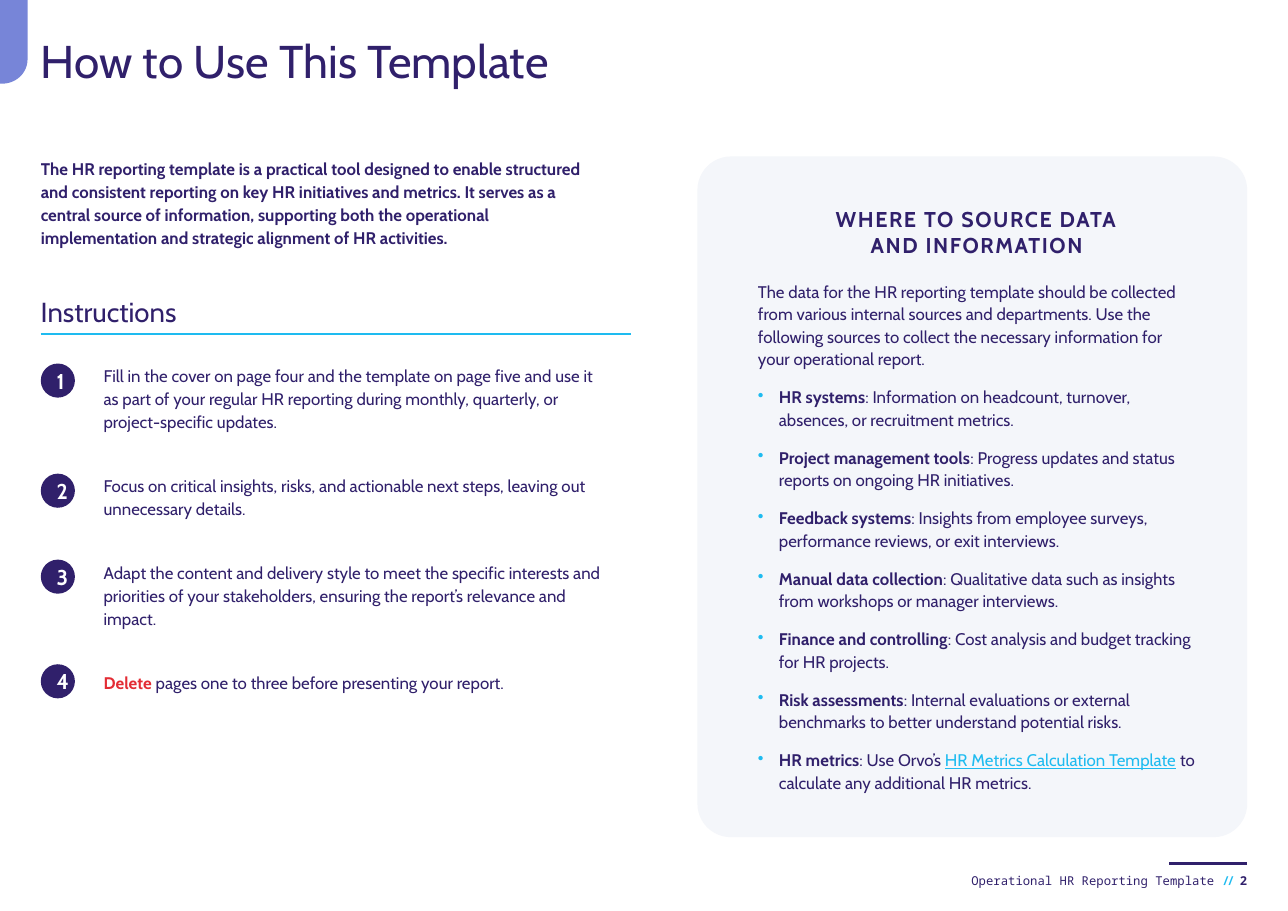
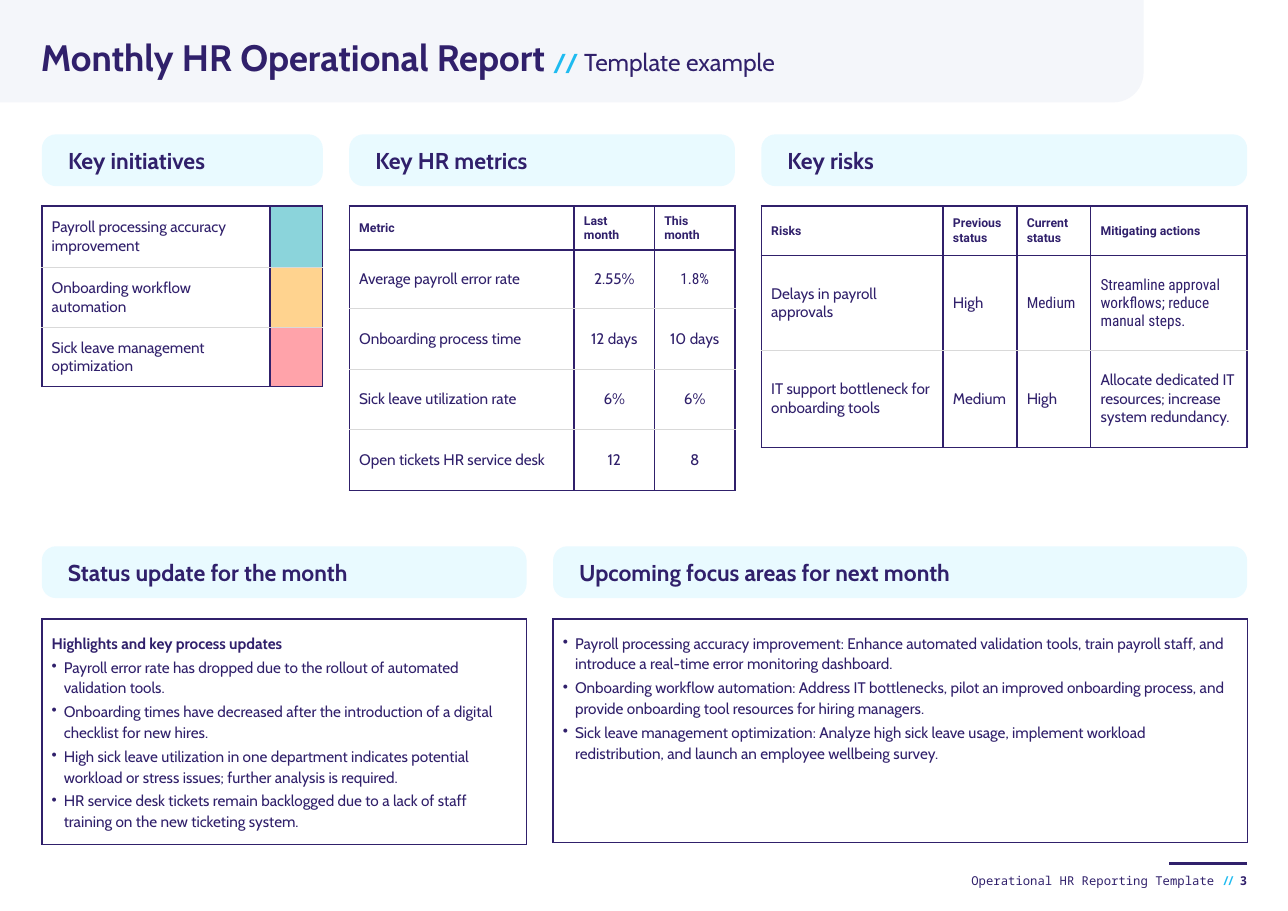
from copy import deepcopy
from math import cos, pi, sin

from lxml import etree
from pptx import Presentation
from pptx import util as u
from pptx.dml.color import RGBColor
from pptx.enum import shapes, text
from pptx.oxml import ns

PX = 9144  # EMU in one px, 100 px to the inch
INK, CYAN, WHITE, RED = "30206B", "1EBBF0", "FFFFFF", "E32C34"
PERIWINKLE, MIST, ICE, GREY = "7785D8", "F4F6FA", "E9FAFF", "D9D9D9"
LEFT, RIGHT, GAP = 37, 1132, 24

SHAPE, ALIGN, ANCHOR = shapes.MSO_SHAPE, text.PP_ALIGN, text.MSO_ANCHOR
BODY = {"name": "Cabin", "size": u.Pt(11), "bold": False, "color": INK}
SMALL = {**BODY, "size": u.Pt(10)}
TABLE_HEAD = {**BODY, "name": "Roboto", "size": u.Pt(8), "bold": True}
FOOTER = {**BODY, "name": "Noto Sans Mono", "size": u.Pt(8)}
CONDENSED = {"name": "Roboto Condensed"}
BOLD = {"bold": True}
TITLE_FORM = {"alignment": ALIGN.LEFT, "line_spacing": 0.9}
CARD_FORM = {"line_spacing": 1.12, "space_after": u.Pt(2)}


def px(*lengths):
    return [u.Emu(round(length * PX)) for length in lengths]


def rgb(color):
    return RGBColor.from_string(color)


def apply(target, values):
    for key, value in values.items():
        setattr(target, key, value)


def insets(across, down):
    across, down = px(across, down)
    return {"margin_left": across, "margin_right": across,
            "margin_top": down, "margin_bottom": down}


def add_bullet(paragraph, indent, color):
    properties = paragraph._p.get_or_add_pPr()
    properties.set("marL", str(indent * PX))
    properties.set("indent", str(-indent * PX))
    mark = etree.SubElement(properties, ns.qn("a:buClr"))
    etree.SubElement(mark, ns.qn("a:srgbClr"), val=color)
    etree.SubElement(properties, ns.qn("a:buChar"), char="•")


def add_run(paragraph, words, color, spacing=0, **font):
    run = paragraph.add_run()
    run.text = words
    apply(run.font, font)
    run.font.color.rgb = rgb(color)
    if spacing:
        run._r.get_or_add_rPr().set("spc", str(spacing))
    return run


def write(frame, runs, font=BODY, form=None, bullet=None):
    """Add one paragraph; runs is a string or (words, font changes) pairs."""
    paragraph = frame.add_paragraph() if frame.text else frame.paragraphs[0]
    if bullet:
        add_bullet(paragraph, *bullet)
    apply(paragraph, form or {})
    for words, changes in [(runs, {})] if isinstance(runs, str) else runs:
        first, *others = words.split("\n")
        run = add_run(paragraph, first, **{**font, **changes})
        for line in others:
            paragraph.add_line_break()
            paragraph._p[-1].append(deepcopy(run._r.rPr))
            add_run(paragraph, line, **{**font, **changes})


def add_text(slide, *box):
    frame = slide.shapes.add_textbox(*px(*box)).text_frame
    apply(frame, {"word_wrap": True, **insets(0, 0)})
    return frame


def paint(shape, color):
    shape.shadow.inherit = False
    shape.fill.solid()
    shape.fill.fore_color.rgb = rgb(color)
    shape.line.fill.background()


def add_shape(slide, kind, box, color, corner=None):
    shape = slide.shapes.add_shape(kind, *px(*box))
    paint(shape, color)
    if corner is not None:
        shape.adjustments[0] = corner
    return shape


def add_rule(slide, start, end, y, color, weight):
    rule = slide.shapes.add_connector(
        shapes.MSO_CONNECTOR.STRAIGHT, *px(start, y, end, y))
    rule.line.color.rgb = rgb(color)
    rule.line.width = u.Pt(weight)
    etree.SubElement(rule._element.spPr, ns.qn("a:effectLst"))


def add_corner_tab(slide):
    """Tab at the top left whose lower right corner is rounded."""
    arc = [(2 + 23 * cos(step * pi / 48), 54 + 22 * sin(step * pi / 48))
           for step in range(25)]
    outline = [px(*point) for point in [(25, 0), *arc, (0, 76)]]
    builder = slide.shapes.build_freeform(0, 0, scale=1.0)
    builder.add_line_segments(outline, close=True)
    paint(builder.convert_to_shape(), PERIWINKLE)


def add_title(slide, box, runs, font):
    title = slide.shapes.title
    apply(title, dict(zip(("left", "top", "width", "height"), px(*box))))
    apply(title.text_frame, {
        "word_wrap": True, "auto_size": text.MSO_AUTO_SIZE.NONE,
        "vertical_anchor": ANCHOR.TOP, **insets(0, 0)})
    write(title.text_frame, runs, font, TITLE_FORM)


def add_footer(slide, page):
    add_rule(slide, RIGHT, 1061, 784, INK, 2)
    write(add_text(slide, LEFT, 791, RIGHT - LEFT, 19),
          [("Operational HR Reporting Template ", {}),
           ("// ", {"color": CYAN, "bold": True, "spacing": -150}),
           (str(page), BOLD)],
          FOOTER, {"alignment": ALIGN.RIGHT, "line_spacing": 1.14})


def add_badge(slide, top, number):
    badge = add_shape(slide, SHAPE.OVAL, (LEFT, top, 31, 31), INK)
    badge.text_frame.vertical_anchor = ANCHOR.MIDDLE
    write(badge.text_frame, str(number),
          {**BODY, "size": u.Pt(14), "bold": True, "color": WHITE},
          {"alignment": ALIGN.CENTER})


def add_section(slide, left, top, width, heading):
    pill = add_shape(slide, SHAPE.ROUNDED_RECTANGLE, (left, top, width, 47),
                     ICE, 0.273)
    apply(pill.text_frame, {"word_wrap": True, "vertical_anchor": ANCHOR.MIDDLE,
                            **insets(20, 5)})
    write(pill.text_frame, heading, {**BODY, "size": u.Pt(15), "bold": True},
          {"alignment": ALIGN.LEFT})


def set_borders(cell, top, bottom):
    """Ink at both sides; top and bottom tell whether those edges are ink too."""
    properties = cell._tc.get_or_add_tcPr()
    edges = {"lnL": True, "lnR": True, "lnT": top, "lnB": bottom}
    for place, (tag, strong) in enumerate(edges.items()):
        line = etree.Element(ns.qn(f"a:{tag}"), w="12700" if strong else "6350")
        fill = etree.SubElement(line, ns.qn("a:solidFill"))
        etree.SubElement(fill, ns.qn("a:srgbClr"), val=INK if strong else GREY)
        properties.insert(place, line)


def add_grid(slide, left, top, widths, heights, header=False, pad=4,
             anchor=ANCHOR.MIDDLE):
    table = slide.shapes.add_table(
        len(heights), len(widths),
        *px(left, top, sum(widths), sum(heights))).table
    apply(table, {"first_row": header, "horz_banding": False})
    for column, width in zip(table.columns, px(*widths)):
        column.width = width
    last = len(heights) - 1
    for index, (row, height) in enumerate(zip(table.rows, px(*heights))):
        row.height = height
        for cell in row.cells:
            apply(cell, {"vertical_anchor": anchor, **insets(9, pad)})
            cell.fill.background()
            set_borders(cell, index == 0 or header and index == 1,
                        index == last or header and index == 0)
    return table


def fill_grid(table, rows, value_align=ALIGN.LEFT):
    """Write a header row and body rows; value_align is for later columns."""
    for r, row in enumerate(rows):
        for c, words in enumerate(row):
            write(table.cell(r, c).text_frame, words, SMALL if r else TABLE_HEAD,
                  {"alignment": value_align if r and c else ALIGN.LEFT})


def add_card(slide, left, width, bullets, heading=None):
    card = add_grid(slide, left, 562, [width], [203], pad=12, anchor=ANCHOR.TOP)
    frame = card.cell(0, 0).text_frame
    if heading:
        write(frame, heading, {**SMALL, **BOLD}, CARD_FORM)
    for words in bullets:
        write(frame, words, SMALL, CARD_FORM, (11, INK))


def add_instructions(slide):
    write(add_text(slide, LEFT, 142, 509, 86),
          "The HR reporting template is a practical tool designed to enable structured and consistent reporting on key HR initiatives and metrics. It serves as a central source of information, supporting both the operational implementation and strategic alignment of HR activities.",
          {**BODY, **BOLD}, {"line_spacing": 1.13})
    write(add_text(slide, LEFT, 264, 466, 36), "Instructions",
          {**BODY, "size": u.Pt(18)}, {"line_spacing": 1.13})
    add_rule(slide, LEFT, 573, 303, CYAN, 1.5)
    steps = [
        (330, "Fill in the cover on page four and the template on page five and use it as part of your regular HR reporting during monthly, quarterly, or project-specific updates."),
        (430, "Focus on critical insights, risks, and actionable next steps, leaving out unnecessary details."),
        (508, "Adapt the content and delivery style to meet the specific interests and priorities of your stakeholders, ensuring the report’s relevance and impact."),
        (603, [("Delete", {"color": RED, "bold": True}),
               (" pages one to three before presenting your report.", {})]),
    ]
    frame = add_text(slide, 94, 330, 452, 304)
    for number, (top, words) in enumerate(steps, 1):
        write(frame, words, form={"line_spacing": 1.13, "space_after": u.Pt(27)})
        add_badge(slide, top, number)


def add_sources(slide):
    add_shape(slide, SHAPE.ROUNDED_RECTANGLE, (633, 142, 499, 618), MIST, 0.061)
    frame = add_text(slide, 688, 187, 397, 534)
    write(frame, "WHERE TO SOURCE DATA\nAND INFORMATION",
          {**BODY, "size": u.Pt(14), "bold": True, "spacing": 100},
          {"alignment": ALIGN.CENTER, "space_after": u.Pt(10)})
    form = {"line_spacing": 1.12, "space_before": u.Pt(4), "space_after": u.Pt(6)}
    write(frame, "The data for the HR reporting template should be collected from various internal sources and departments. Use the following sources to collect the necessary information for your operational report.", form=form)
    sources = [
        ("HR systems", ": Information on headcount, turnover, absences, or recruitment metrics."),
        ("Project management tools", ": Progress updates and status reports on ongoing HR initiatives."),
        ("Feedback systems", ": Insights from employee surveys, performance reviews, or exit interviews."),
        ("Manual data collection", ": Qualitative data such as insights from workshops or manager interviews."),
        ("Finance and controlling", ": Cost analysis and budget tracking for HR projects."),
        ("Risk assessments", ": Internal evaluations or external benchmarks to better understand potential risks."),
        ("HR metrics", ": Use Orvo’s "),
    ]
    reference = [("HR Metrics Calculation Template", {"color": CYAN, "underline": True}),
                 (" to calculate any additional HR metrics.", {})]
    for source, detail in sources:
        ending = reference if source == "HR metrics" else []
        write(frame, [(source, BOLD), (detail, {}), *ending],
              form=form, bullet=(19, CYAN))


def add_report_tables(slide, lefts):
    initiatives = [
        ("Payroll processing accuracy improvement", "8BD4DB"),
        ("Onboarding workflow automation", "FFD38F"),
        ("Sick leave management optimization", "FFA3AA"),
    ]
    statuses = add_grid(slide, lefts[0], 187, [207, 48], [56, 54, 54])
    for row, (initiative, color) in enumerate(initiatives):
        write(statuses.cell(row, 0).text_frame, initiative, SMALL)
        light = statuses.cell(row, 1).fill
        light.solid()
        light.fore_color.rgb = rgb(color)

    metrics = add_grid(slide, lefts[1], 187, [204, 73, 73],
                       [40, 53, 55, 55, 55], header=True)
    fill_grid(metrics, [
        ("Metric", "Last month", "This month"),
        ("Average payroll error rate", "2.55%", [("1.8%", CONDENSED)]),
        ("Onboarding process time", "12 days", "10 days"),
        ("Sick leave utilization rate", "6%", "6%"),
        ("Open tickets HR service desk", "12", "8"),
    ], ALIGN.CENTER)

    risks = add_grid(slide, lefts[2], 187, [165, 67, 67, 142],
                     [45, 86, 88], header=True)
    fill_grid(risks, [
        ("Risks", "Previous status", "Current status", "Mitigating actions"),
        ("Delays in payroll approvals", "High", [("Medium", CONDENSED)],
         [("Streamline approval workflows; reduce manual steps.", CONDENSED)]),
        ("IT support bottleneck for onboarding tools", "Medium", "High",
         "Allocate dedicated IT resources; increase system redundancy."),
    ])


def add_sections(slide, top, sections):
    """Set the headings side by side with equal gaps; return their left edges."""
    lefts, left = [], 38
    for heading, width in sections:
        add_section(slide, left, top, width, heading)
        lefts.append(left)
        left += width + GAP
    return lefts


def build_guide(slide):
    add_corner_tab(slide)
    add_title(slide, (LEFT, 35, 1095, 51), "How to Use This Template",
              {**BODY, "size": u.Pt(30)})
    add_instructions(slide)
    add_sources(slide)


def build_report(slide):
    band = add_shape(slide, SHAPE.ROUND_1_RECTANGLE, (0, 0, 1038, 93), MIST, 0.294)
    band._element.spPr.find(ns.qn("a:xfrm")).set("flipV", "1")
    slide.shapes._spTree.insert(2, band._element)  # behind the title
    add_title(slide, (LEFT, 36, 1000, 64),
              [("Monthly HR Operational Report ", {"size": u.Pt(24), "bold": True}),
               ("// ", {"color": CYAN, "bold": True}),
               ("Template example", {})],
              {**BODY, "size": u.Pt(16)})
    add_report_tables(slide, add_sections(slide, 122, [
        ("Key initiatives", 255), ("Key HR metrics", 350), ("Key risks", 441)]))
    status, focus = add_sections(slide, 496, [
        ("Status update for the month", 440),
        ("Upcoming focus areas for next month", 630)])
    add_card(slide, status, 440, [
        "Payroll error rate has dropped due to the rollout of automated validation tools.",
        "Onboarding times have decreased after the introduction of a digital checklist for new hires.",
        "High sick leave utilization in one department indicates potential workload or stress issues; further analysis is required.",
        "HR service desk tickets remain backlogged due to a lack of staff training on the new ticketing system.",
    ], "Highlights and key process updates")
    add_card(slide, focus, 630, [
        "Payroll processing accuracy improvement: Enhance automated validation tools, train payroll staff, and introduce a real-time error monitoring dashboard.",
        "Onboarding workflow automation: Address IT bottlenecks, pilot an improved onboarding process, and provide onboarding tool resources for hiring managers.",
        "Sick leave management optimization: Analyze high sick leave usage, implement workload redistribution, and launch an employee wellbeing survey.",
    ])


def main():
    deck = Presentation()
    deck.slide_width, deck.slide_height = px(1169, 827)
    for page, build in enumerate((build_guide, build_report), 2):
        slide = deck.slides.add_slide(deck.slide_layouts[5])
        build(slide)
        add_footer(slide, page)
    deck.save("out.pptx")


if __name__ == "__main__":
    main()
